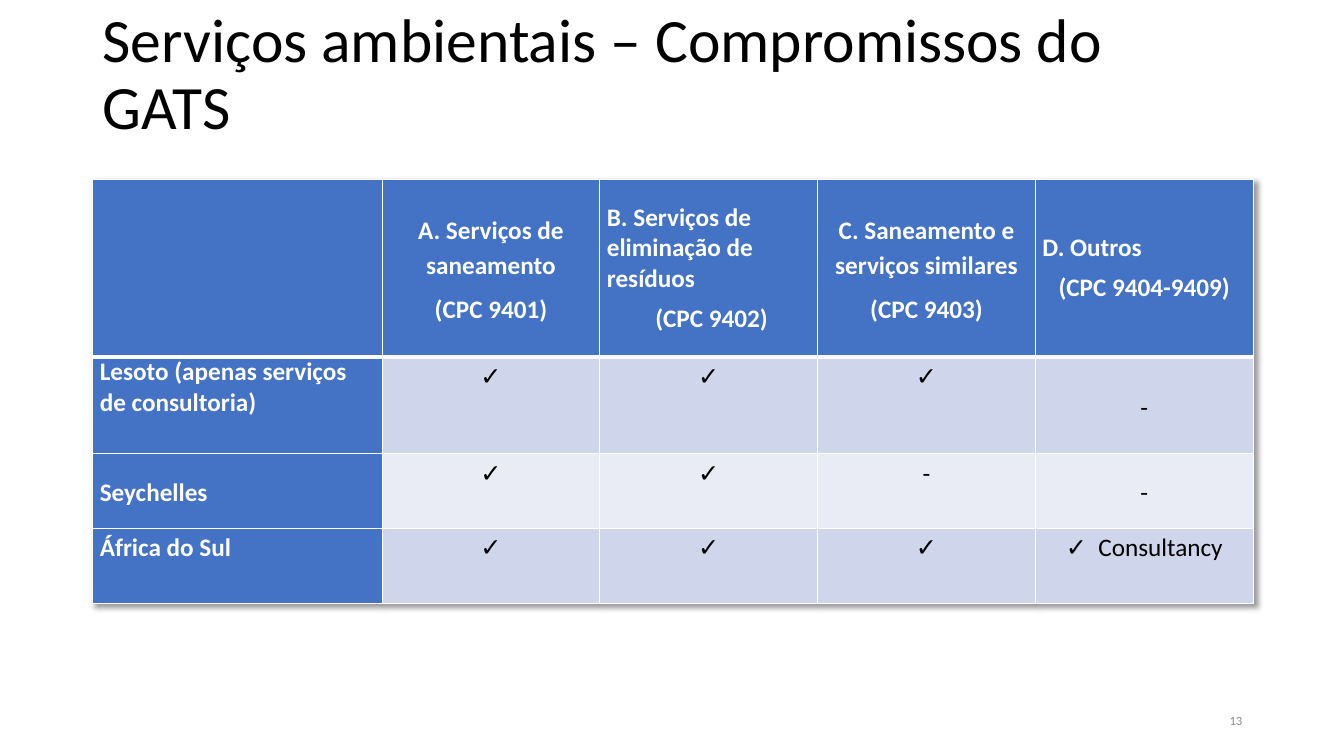
from dataclasses import dataclass
from typing import Any

from lxml.etree import SubElement
from pptx import Presentation
from pptx.dml.color import RGBColor
from pptx.enum.text import MSO_ANCHOR, PP_ALIGN
from pptx.oxml import parse_xml
from pptx.oxml.ns import nsdecls, qn
from pptx.util import Inches, Pt


@dataclass(frozen=True)
class Theme:
    font: str = "Calibri"
    black: str = "000000"
    white: str = "FFFFFF"
    gray: str = "8C8C8C"
    blue: str = "4472C4"
    bands: tuple[str, str] = ("CFD5EA", "E9EBF5")
    title_size: int = 44
    table_size: int = 18
    number_size: int = 9
    thin: int = 1
    thick: int = 3


@dataclass(frozen=True)
class Line:
    text: str
    size: int
    color: str
    bold: bool = False
    align: PP_ALIGN = PP_ALIGN.LEFT
    spacing: float = 1.0
    before: int = 0
    after: int = 0


@dataclass(frozen=True)
class Entry:
    lines: tuple[Line, ...]
    anchor: MSO_ANCHOR = MSO_ANCHOR.TOP


@dataclass(frozen=True)
class Label:
    line: Line
    place: tuple[float, float, float, float]
    bottom_inset: float = 0.05


THEME = Theme()
COLUMNS = (2.87, 2.16, 2.16, 2.16, 2.16)
ROWS = (1.76, 0.96, 0.74, 0.75)
TABLE_PLACE = (0.92, 1.78, sum(COLUMNS), sum(ROWS))
LABELS = (
    Label(
        Line("Serviços ambientais – Compromissos do GATS", THEME.title_size, THEME.black, spacing=0.9),
        (0.92, 0.4, 11.5, 1.45),
        0.79,
    ),
    Label(
        Line("13", THEME.number_size, THEME.gray, align=PP_ALIGN.RIGHT),
        (9.42, 6.95, 3, 0.4),
    ),
)


def heading(text: str) -> Line:
    return Line(text, THEME.table_size, THEME.white, True, PP_ALIGN.CENTER, 1.15, 3, 3)


def tight(text: str) -> Line:
    return Line(text, THEME.table_size, THEME.white, True)


def country(text: str) -> Line:
    return Line(text, THEME.table_size, THEME.white, True, PP_ALIGN.LEFT, 1.15, 3, 3)


def mark(text: str, anchor: MSO_ANCHOR = MSO_ANCHOR.TOP) -> Entry:
    return Entry((Line(text, THEME.table_size, THEME.black, False, PP_ALIGN.CENTER, 1.15, 3, 3),), anchor)


MIDDLE = MSO_ANCHOR.MIDDLE
ENTRIES = (
    (
        Entry(()),
        Entry((heading("A. Serviços de saneamento"), heading("(CPC 9401)")), MIDDLE),
        Entry((tight("B. Serviços de eliminação de resíduos"), heading(" (CPC 9402)")), MIDDLE),
        Entry((heading("C. Saneamento e serviços similares"), heading("(CPC 9403)")), MIDDLE),
        Entry((tight("D. Outros"), heading("(CPC 9404-9409)")), MIDDLE),
    ),
    (
        Entry((tight("Lesoto (apenas serviços de consultoria)"),)),
        mark("✓"), mark("✓"), mark("✓"), mark("-", MIDDLE),
    ),
    (
        Entry((country("Seychelles"),), MIDDLE),
        mark("✓"), mark("✓"), mark("-"), mark("-", MIDDLE),
    ),
    (
        Entry((country("África do Sul"),)),
        mark("✓"), mark("✓"), mark("✓"), mark("✓  Consultancy"),
    ),
)


def apply(target: Any, values: dict[str, Any]) -> None:
    for name, value in values.items():
        setattr(target, name, value)


def write(frame: Any, lines: tuple[Line, ...]) -> None:
    for index, line in enumerate(lines):
        para = frame.add_paragraph() if index else frame.paragraphs[0]
        apply(para, {
            "alignment": line.align,
            "line_spacing": line.spacing,
            "space_before": Pt(line.before),
            "space_after": Pt(line.after),
        })
        span = para.add_run()
        span.text = line.text
        apply(span.font, {"name": THEME.font, "size": Pt(line.size), "bold": line.bold})
        span.font.color.rgb = RGBColor.from_string(line.color)


def add_label(page: Any, label: Label) -> None:
    box = page.shapes.add_textbox(*map(Inches, label.place))
    apply(box.text_frame, {
        "word_wrap": True,
        "vertical_anchor": MIDDLE,
        "margin_bottom": Inches(label.bottom_inset),
    })
    write(box.text_frame, (label.line,))


def add_borders(cell: Any, top: int, bottom: int) -> None:
    properties = cell._tc.get_or_add_tcPr()
    widths = {"lnL": THEME.thin, "lnR": THEME.thin, "lnT": top, "lnB": bottom}
    for index, (side, width) in enumerate(widths.items()):
        border = parse_xml(
            f'<a:{side} {nsdecls("a")} w="{Pt(width)}"><a:solidFill>'
            f'<a:srgbClr val="{THEME.white}"/></a:solidFill></a:{side}>'
        )
        properties.insert(index, border)


def add_shadow(table: Any) -> None:
    properties = table._tbl.tblPr
    effects = parse_xml(f'<a:effectLst {nsdecls("a")}/>')
    shadow = SubElement(
        effects, qn("a:outerShdw"), blurRad="50800", dist="38100", dir="2700000", algn="tl", rotWithShape="0"
    )
    color = SubElement(shadow, qn("a:srgbClr"), val=THEME.black)
    SubElement(color, qn("a:alpha"), val="40000")
    properties.insert(0, effects)


def add_commitments(page: Any) -> None:
    table = page.shapes.add_table(len(ROWS), len(COLUMNS), *map(Inches, TABLE_PLACE)).table
    for column, width in zip(table.columns, COLUMNS):
        column.width = Inches(width)
    for row, height in zip(table.rows, ROWS):
        row.height = Inches(height)
    for row_index, entries in enumerate(ENTRIES):
        for column_index, entry in enumerate(entries):
            cell = table.cell(row_index, column_index)
            apply(cell, {
                "vertical_anchor": entry.anchor,
                "margin_left": Inches(0.07),
                "margin_right": Inches(0.07),
                "margin_top": 0,
                "margin_bottom": 0,
            })
            band = THEME.bands[(row_index + 1) % 2]
            fill = THEME.blue if row_index == 0 or column_index == 0 else band
            cell.fill.solid()
            cell.fill.fore_color.rgb = RGBColor.from_string(fill)
            top = THEME.thick if row_index == 1 else THEME.thin
            bottom = THEME.thick if row_index == 0 else THEME.thin
            add_borders(cell, top, bottom)
            write(cell.text_frame, entry.lines)
    add_shadow(table)


def main() -> None:
    deck = Presentation()
    apply(deck, {"slide_width": Inches(13.33), "slide_height": Inches(7.5)})
    page = deck.slides.add_slide(deck.slide_layouts[6])
    add_commitments(page)
    for label in LABELS:
        add_label(page, label)
    deck.save("out.pptx")


if __name__ == "__main__":
    main()
